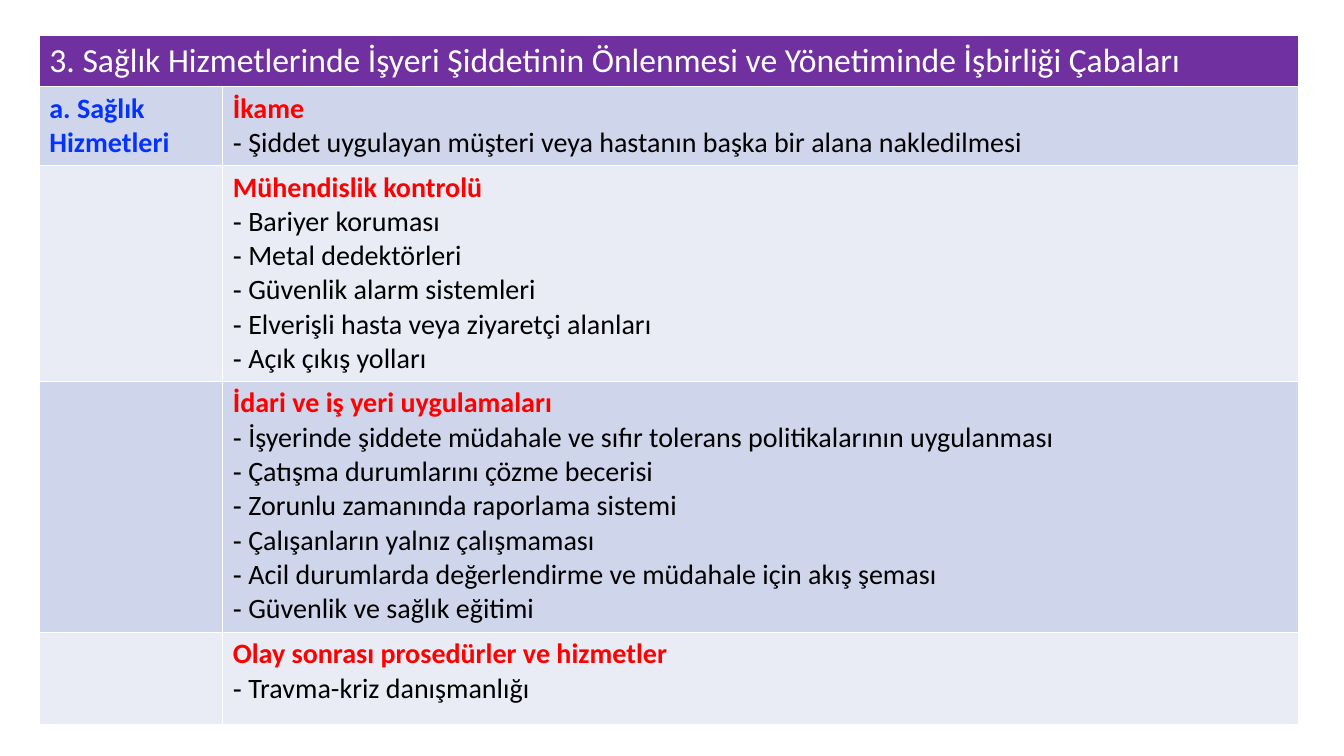
import pptx
import pptx.util
import pptx.dml.color
import pptx.oxml
import pptx.oxml.ns
from pptx.util import Inches

WHITE, BLACK, RED, BLUE, PURPLE = "FFFFFF", "000000", "FF0000", "0432FF", "7030A0"
BANDS = ["CFD5EA", "E9EBF5"]


def rgb(value):
    return pptx.dml.color.RGBColor.from_string(value)


def add_line(tf, index, text, color, size=20, bold=False):
    p = tf.paragraphs[0] if index == 0 else tf.add_paragraph()
    r = p.add_run()
    r.text = text
    for name, value in {"name": "Calibri", "size": pptx.util.Pt(size), "bold": bold}.items():
        setattr(r.font, name, value)
    r.font.color.rgb = rgb(color)


prs = pptx.Presentation()
prs.slide_width, prs.slide_height = Inches(13.33), Inches(7.5)
s = prs.slides.add_slide(prs.slide_layouts[6])

title = "3. Sağlık Hizmetlerinde İşyeri Şiddetinin Önlenmesi ve Yönetiminde İşbirliği Çabaları"
measures = [
    ("İkame", ["Şiddet uygulayan müşteri veya hastanın başka bir alana nakledilmesi"]),
    ("Mühendislik kontrolü", [
        "Bariyer koruması",
        "Metal dedektörleri",
        "Güvenlik alarm sistemleri",
        "Elverişli hasta veya ziyaretçi alanları",
        "Açık çıkış yolları",
    ]),
    ("İdari ve iş yeri uygulamaları", [
        "İşyerinde şiddete müdahale ve sıfır tolerans politikalarının uygulanması",
        "Çatışma durumlarını çözme becerisi",
        "Zorunlu zamanında raporlama sistemi",
        "Çalışanların yalnız çalışmaması",
        "Acil durumlarda değerlendirme ve müdahale için akış şeması",
        "Güvenlik ve sağlık eğitimi",
    ]),
    ("Olay sonrası prosedürler ve hizmetler", ["Travma-kriz danışmanlığı"]),
]

# Table grid
table = s.shapes.add_table(5, 2, Inches(0.39), Inches(0.35), Inches(12.49), Inches(6.83)).table
for column, width in zip(table.columns, [1.82, 10.67]):
    column.width = Inches(width)
for row, height in zip(table.rows, [0.51, 0.78, 2.14, 2.49, 0.92]):
    row.height = Inches(height)

# White borders and banded fills
for i, row in enumerate(table.rows):
    for cell in row.cells:
        tcPr = cell._tc.get_or_add_tcPr()
        for side in ("lnL", "lnR", "lnT", "lnB"):
            tcPr.append(pptx.oxml.parse_xml(
                f'<a:{side} {pptx.oxml.ns.nsdecls("a")} w="12700"><a:solidFill>'
                f'<a:srgbClr val="{WHITE}"/></a:solidFill></a:{side}>'))
        cell.fill.solid()
        cell.fill.fore_color.rgb = rgb(PURPLE if i == 0 else BANDS[(i - 1) % 2])

# Header and section name
table.cell(0, 0).merge(table.cell(0, 1))
add_line(table.cell(0, 0).text_frame, 0, title, WHITE, size=24)
add_line(table.cell(1, 0).text_frame, 0, "a. Sağlık Hizmetleri", BLUE, bold=True)

# Measures
for i, (heading, items) in enumerate(measures, start=1):
    tf = table.cell(i, 1).text_frame
    add_line(tf, 0, heading, RED, bold=True)
    for j, item in enumerate(items, start=1):
        add_line(tf, j, f"⁃ {item}", BLACK)

prs.save("out.pptx")
